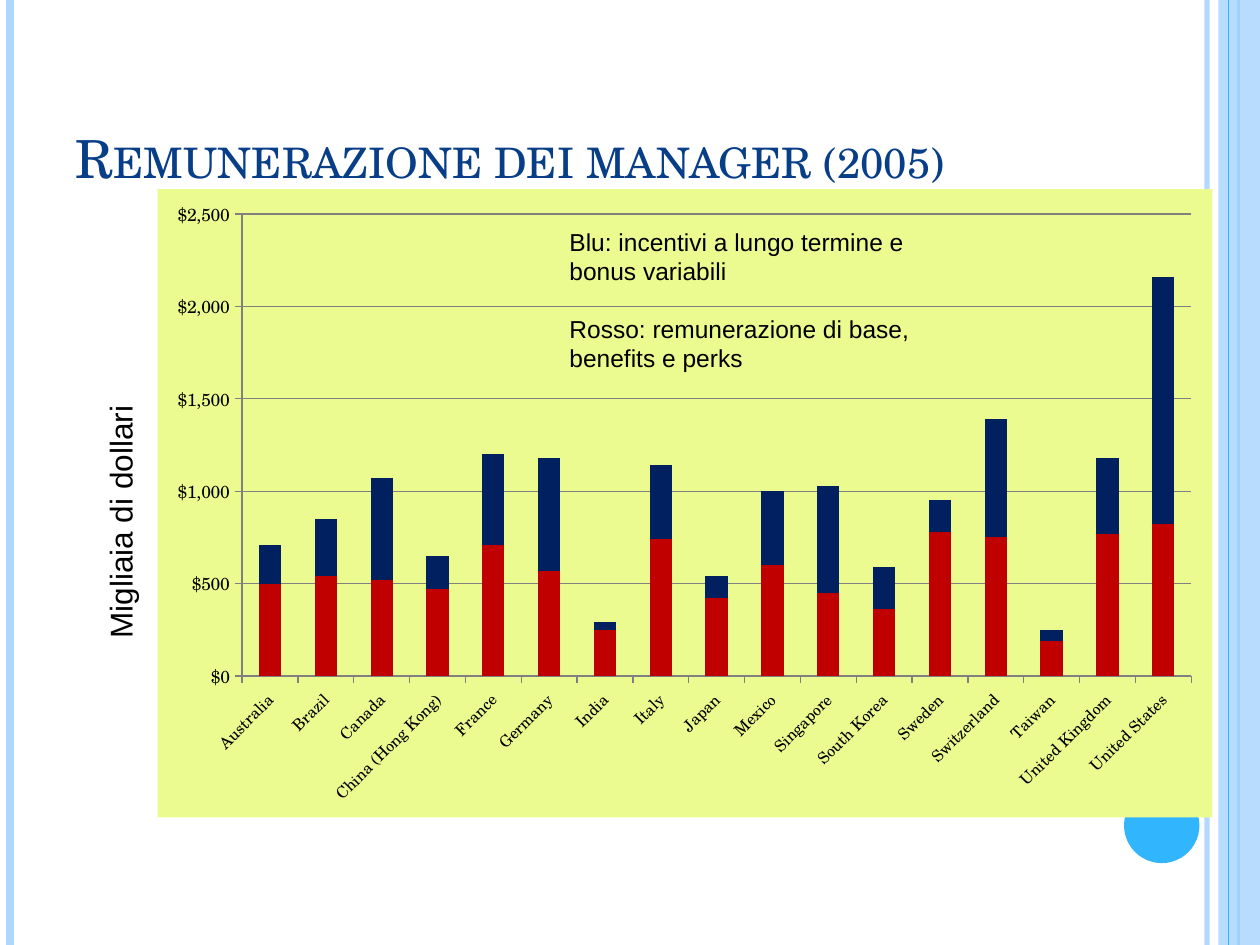
import pptx
import pptx.util
import pptx.chart.data
import pptx.dml.color
import pptx.enum.chart
import pptx.enum.shapes
import pptx.enum.text
import pptx.oxml
import pptx.oxml.ns

Cm, Pt = pptx.util.Cm, pptx.util.Pt
RGBColor = pptx.dml.color.RGBColor
PALE = RGBColor(0xAE, 0xD7, 0xFE)
SKY = RGBColor(0x31, 0xB6, 0xFD)
TITLE = RGBColor(0x07, 0x3E, 0x87)
LIME = RGBColor(0xEC, 0xFB, 0x8F)
RED = RGBColor(0xC0, 0x00, 0x00)
NAVY = RGBColor(0x00, 0x20, 0x60)
GREY = RGBColor(0x80, 0x80, 0x80)
BLACK = RGBColor(0, 0, 0)
SERIF, SANS = "TeX Gyre Schola", "Arial"
HEIGHT = 19.05

PAY = [
    ("Australia", 500, 210), ("Brazil", 540, 310), ("Canada", 520, 550),
    ("China (Hong Kong)", 470, 180), ("France", 710, 490),
    ("Germany", 570, 610), ("India", 250, 40), ("Italy", 740, 400),
    ("Japan", 420, 120), ("Mexico", 600, 400), ("Singapore", 450, 580),
    ("South Korea", 360, 230), ("Sweden", 780, 170),
    ("Switzerland", 750, 640), ("Taiwan", 190, 60),
    ("United Kingdom", 770, 410), ("United States", 820, 1340),
]


def apply(obj, **values):
    """Set each named attribute on an object."""
    for name, value in values.items():
        setattr(obj, name, value)


def add_xml(parent, tag, **attrs):
    """Append an XML child with attributes and return it."""
    child = pptx.oxml.parse_xml(f"<{tag} {pptx.oxml.ns.nsdecls(tag.split(':')[0])}/>")
    for name, value in attrs.items():
        child.set(name, str(value))
    parent.append(child)
    return child


def set_alpha(fill, percent):
    """Make a solid fill partly transparent."""
    color = fill._xPr.find(".//" + pptx.oxml.ns.qn("a:srgbClr"))
    add_xml(color, "a:alpha", val=percent * 1000)


def add_stripe(s, x, color, width, alpha=100):
    """Draw a full-height vertical line."""
    sp = s.shapes.add_connector(pptx.enum.shapes.MSO_CONNECTOR.STRAIGHT,
                                Cm(x), Cm(0), Cm(x), Cm(HEIGHT))
    sp.line.color.rgb = color
    sp.line.width = Pt(width)
    if alpha < 100:
        set_alpha(sp.line.fill, alpha)
    add_xml(sp._element.spPr, "a:effectLst")


def add_block(s, kind, x, y, w, h, color, alpha=100):
    """Draw a plain filled shape."""
    sp = s.shapes.add_shape(kind, Cm(x), Cm(y), Cm(w), Cm(h))
    sp.shadow.inherit = False
    sp.fill.solid()
    sp.fill.fore_color.rgb = color
    sp.line.fill.background()
    if alpha < 100:
        set_alpha(sp.fill, alpha)


def add_text(s, x, y, w, h, lines, size, font=SANS, color=BLACK, gap=0):
    """Add a wrapped text box and return it."""
    sp = s.shapes.add_textbox(Cm(x), Cm(y), Cm(w), Cm(h))
    tf = sp.text_frame
    tf.word_wrap = True
    for i, line in enumerate(lines):
        p = tf.paragraphs[0] if i == 0 else tf.add_paragraph()
        if i:
            p.space_before = Pt(gap)
        r = p.add_run()
        r.text = line
        apply(r.font, size=Pt(size), name=font)
        r.font.color.rgb = color
    return sp


def add_title(s, text):
    """Add the heading in small capitals."""
    sp = add_text(s, 1.27, 0.76, 20.75, 3.18, [text], 30, SERIF, TITLE)
    sp.text_frame.vertical_anchor = pptx.enum.text.MSO_ANCHOR.BOTTOM
    sp.text_frame.paragraphs[0].runs[0].font._element.set("cap", "small")


def set_plot_area(chart, **fractions):
    """Fix the inner plot area as fractions of the chart."""
    plot_area = chart._chartSpace.chart.plotArea
    for old in plot_area.findall(pptx.oxml.ns.qn("c:layout")):
        plot_area.remove(old)
    layout = add_xml(plot_area, "c:layout")
    plot_area.insert(0, layout)
    manual = add_xml(layout, "c:manualLayout")
    modes = {"layoutTarget": "inner", "xMode": "edge", "yMode": "edge"}
    for name, value in {**modes, **fractions}.items():
        add_xml(manual, f"c:{name}", val=value)


def style_axis(axis, size):
    """Format an axis line and its labels."""
    axis.major_tick_mark = pptx.enum.chart.XL_TICK_MARK.OUTSIDE
    axis.format.line.color.rgb = GREY
    apply(axis.tick_labels.font, size=Pt(size), name=SERIF)
    axis.tick_labels.font.color.rgb = BLACK


def add_pay_chart(s):
    """Add the stacked column chart of pay by country."""
    names, base, bonus = zip(*PAY)
    data = pptx.chart.data.CategoryChartData()
    data.categories = names
    data.add_series("Series 1", base)
    data.add_series("Series 2", bonus)
    chart = s.shapes.add_chart(pptx.enum.chart.XL_CHART_TYPE.COLUMN_STACKED,
                               Cm(3.18), Cm(3.81), Cm(21.26), Cm(12.67), data).chart
    apply(chart, has_legend=False, has_title=False)
    apply(chart.font, size=Pt(10), name=SERIF)
    chart.font.color.rgb = BLACK
    plot = chart.plots[0]
    apply(plot, gap_width=150, overlap=100, vary_by_categories=False)
    for series, color in zip(plot.series, (RED, NAVY)):
        series.format.fill.solid()
        series.format.fill.fore_color.rgb = color
    style_axis(chart.category_axis, 9)
    chart.category_axis._element.txPr.bodyPr.set("rot", "-2700000")
    axis = chart.value_axis
    style_axis(axis, 10)
    apply(axis, minimum_scale=0, maximum_scale=2500, major_unit=500,
          has_major_gridlines=True)
    axis.major_gridlines.format.line.color.rgb = GREY
    apply(axis.tick_labels, number_format='"$"#,##0', number_format_is_linked=False)
    set_plot_area(chart, x=0.08, y=0.04, w=0.9, h=0.735)
    space = chart._chartSpace
    props = add_xml(space, "c:spPr")
    space.chart.addnext(props)
    fill = add_xml(props, "a:solidFill")
    add_xml(fill, "a:srgbClr", val=LIME)
    add_xml(add_xml(props, "a:ln"), "a:noFill")


def main():
    """Build the slide and save it."""
    prs = pptx.Presentation()
    apply(prs, slide_width=Cm(25.4), slide_height=Cm(HEIGHT))
    s = prs.slides.add_slide(prs.slide_layouts[6])
    shapes = pptx.enum.shapes.MSO_SHAPE
    add_stripe(s, 24.33, PALE, 3, 93)
    add_stripe(s, 0.2, PALE, 4.5)
    add_stripe(s, 24.97, SKY, 1.5)
    add_block(s, shapes.RECTANGLE, 24.56, 0, 0.84, HEIGHT, PALE, 87)
    add_stripe(s, 24.76, SKY, 0.75)
    add_block(s, shapes.OVAL, 22.66, 15.88, 1.52, 1.52, SKY)
    add_title(s, "Remunerazione dei manager (2005)")
    add_pay_chart(s)
    label = add_text(s, -1.17, 9.02, 7.19, 1.02, ["Migliaia di dollari"], 18)
    label.rotation = 270
    add_text(s, 11.23, 4.45, 7.62, 3.25,
             ["Blu: incentivi a lungo termine e bonus variabili",
              "Rosso: remunerazione di base, benefits e perks"], 14, gap=16)
    prs.save("out.pptx")


if __name__ == "__main__":
    main()
